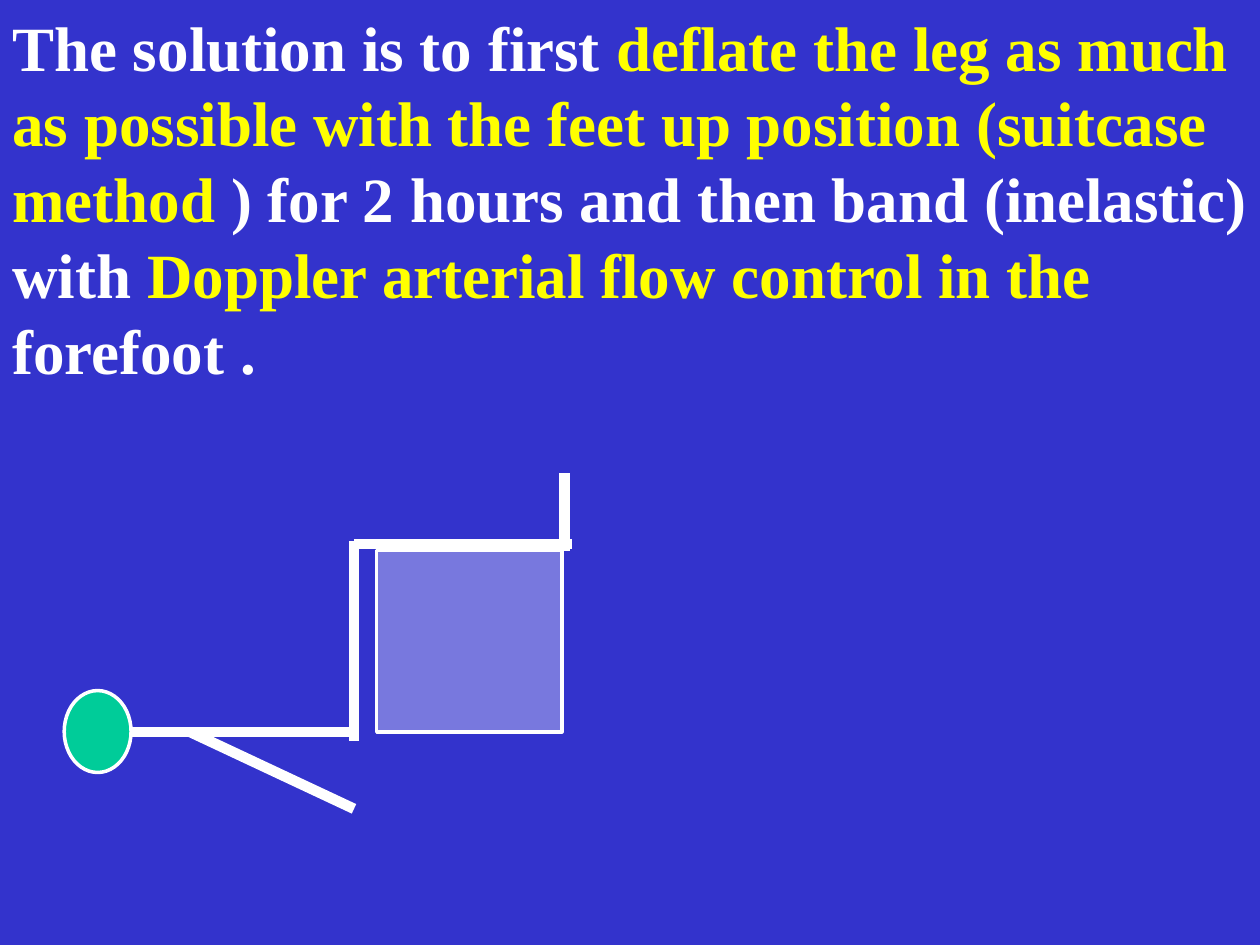
from lxml.etree import SubElement
from pptx import Presentation
from pptx.dml.color import RGBColor
from pptx.enum.shapes import MSO_CONNECTOR as CONN, MSO_SHAPE as SHAPE
from pptx.enum.text import MSO_ANCHOR as ANCHOR, PP_ALIGN as ALIGN
from pptx.oxml.ns import qn
from pptx.util import Pt

WHITE, YELLOW, BLUE = "FFFFFF", "FFFF00", "3333CC"
GREEN, LILAC = "00CC99", "7878DE"


def color(hex_text):
    return RGBColor.from_string(hex_text)


def add_box(shapes, kind, x, y, w, h, fill, line=None, width=2):
    sp = shapes.add_shape(kind, Pt(x), Pt(y), Pt(w), Pt(h))
    sp.shadow.inherit = False
    sp.fill.solid()
    sp.fill.fore_color.rgb = color(fill)
    if line:
        sp.line.color.rgb = color(line)
        sp.line.width = Pt(width)
    else:
        sp.line.fill.background()
    return sp


def add_stroke(shapes, x1, y1, x2, y2, line=WHITE, width=6):
    cx = shapes.add_connector(CONN.STRAIGHT, Pt(x1), Pt(y1), Pt(x2), Pt(y2))
    cx.line.color.rgb = color(line)
    cx.line.width = Pt(width)
    SubElement(cx._element.spPr, qn("a:effectLst"))


def add_text(p, text, size=36, font="Times New Roman", fill=WHITE, bold=True):
    r = p.add_run()
    r.text = text
    r.font.size, r.font.name, r.font.bold = Pt(size), font, bold
    r.font.color.rgb = color(fill)


def add_statement(s, x, y, w, h):
    """Blue panel with the advice at its top."""
    sp = add_box(s.shapes, SHAPE.RECTANGLE, x, y, w, h, BLUE)
    tf = sp.text_frame
    tf.word_wrap = True
    tf.vertical_anchor = ANCHOR.TOP
    tf.margin_left = tf.margin_right = Pt(7.2)
    tf.margin_top = tf.margin_bottom = Pt(4.5)
    p = tf.paragraphs[0]
    p.alignment = ALIGN.LEFT
    p.line_spacing = Pt(43.3)
    add_text(p, "The solution is to first ")
    add_text(p, "deflate the leg as much as possible with the feet up "
                "position (suitcase method ", fill=YELLOW)
    add_text(p, ") for 2 hours and then band (inelastic) with ")
    add_text(p, "Doppler arterial flow control in the ", fill=YELLOW)
    add_text(p, "forefoot .")


def add_lying_figure(s, x, y):
    """Person lying down with the lower legs raised on a suitcase."""
    shapes = s.shapes.add_group_shape().shapes
    back, hip, shin = y + 148.3, x + 165.6, y + 41
    case_top = y + 44.6

    # Head
    head = add_box(shapes, SHAPE.OVAL, x - 4.3, y + 128.9, 46.8, 38.2,
                   GREEN, WHITE)
    head.rotation = 270

    # Trunk, lower leg, thigh, arm and foot
    for stroke in (
        (x + 38.9, back, hip, back),
        (hip, shin, x + 290.2, shin),
        (hip, y + 153.4, hip, y + 38.9),
        (x + 72, back, hip, y + 192.2),
        (x + 285.9, case_top, x + 285.9, y),
    ):
        add_stroke(shapes, *stroke)

    # Suitcase
    add_box(shapes, SHAPE.RECTANGLE, x + 178.6, case_top, 105.8, 103.7,
            LILAC, WHITE)


def main():
    prs = Presentation()
    prs.slide_width, prs.slide_height = Pt(720), Pt(540)
    s = prs.slides.add_slide(prs.slide_layouts[6])
    s.background.fill.solid()
    s.background.fill.fore_color.rgb = color("F2F2F2")
    add_statement(s, 0, 0, 720, 547.2)
    add_lying_figure(s, 36.7, 270)
    prs.save("out.pptx")


if __name__ == "__main__":
    main()
